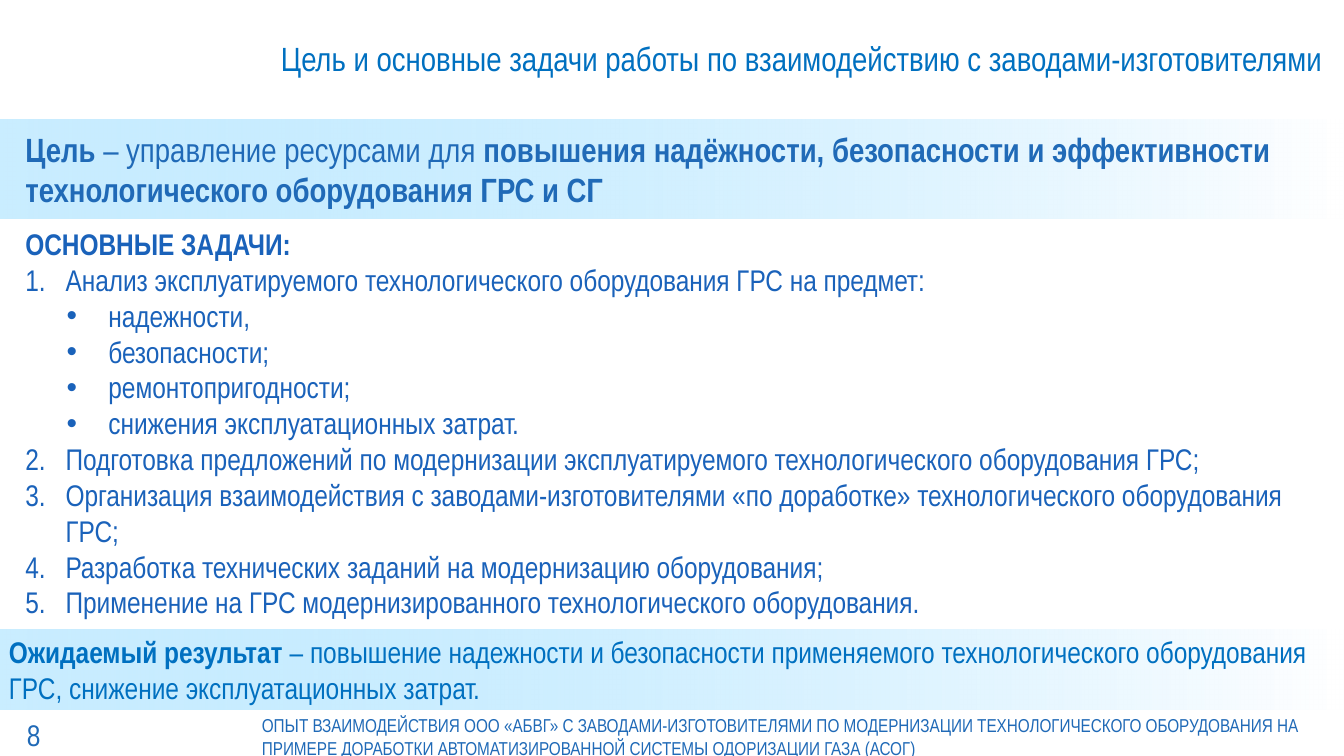
from dataclasses import dataclass

from lxml.etree import SubElement
from pptx import Presentation
from pptx.dml.color import RGBColor
from pptx.enum.shapes import MSO_SHAPE as Preset
from pptx.enum.text import MSO_ANCHOR as Anchor, MSO_AUTO_SIZE as AutoSize, PP_ALIGN as Align
from pptx.oxml.ns import qn
from pptx.util import Cm, Pt

FONT = "Arial Narrow"
STEEL = RGBColor(0x20, 0x6A, 0xB7)
BLUE = RGBColor(0x00, 0x70, 0xC0)
COBALT = RGBColor(0x1A, 0x62, 0xBA)
SKY = RGBColor(0x66, 0xCC, 0xFF)
WHITE = RGBColor(0xFF, 0xFF, 0xFF)
BAND_STOPS = ((SKY, 35), (WHITE, 82))  # colour, opacity in percent

PAGE_WIDTH, PAGE_HEIGHT = 25.4, 14.29
NO_INSETS = (0, 0, 0, 0)
USUAL_INSETS = (0.25, 0.13, 0.25, 0.13)


@dataclass(frozen=True)
class Span:
    text: str
    bold: bool = False


@dataclass(frozen=True)
class Line:
    """A paragraph; number or bullet gives its list mark, lengths are in cm."""
    spans: tuple[Span, ...]
    margin: float = 0
    indent: float = 0
    number: int = 0
    bullet: str = ""


@dataclass(frozen=True)
class Block:
    """A text block; at is left, top, width and height in cm."""
    at: tuple[float, float, float, float]
    lines: tuple[Line, ...]
    size: int
    color: RGBColor
    insets: tuple[float, float, float, float] = NO_INSETS
    anchor: Anchor = Anchor.MIDDLE
    band: bool = False


def plain(text: str) -> tuple[Line, ...]:
    return (Line((Span(text),)),)


def task(number: int, text: str) -> Line:
    return Line((Span(text),), 0.99, -0.76, number=number)


def criterion(text: str) -> Line:
    return Line((Span(text),), 1.8, -0.79, bullet="•")


TASKS = (
    Line((Span("ОСНОВНЫЕ ЗАДАЧИ:", True),), 0.05, 0.18),
    task(1, "Анализ эксплуатируемого технологического оборудования ГРС на предмет:"),
    criterion("надежности,"),
    criterion("безопасности;"),
    criterion("ремонтопригодности;"),
    criterion("снижения эксплуатационных затрат."),
    task(2, "Подготовка предложений по модернизации эксплуатируемого технологического "
            "оборудования ГРС;"),
    task(3, "Организация взаимодействия с заводами-изготовителями «по доработке» "
            "технологического оборудования ГРС;"),
    task(4, "Разработка технических заданий на модернизацию оборудования;"),
    task(5, "Применение на ГРС модернизированного технологического оборудования."),
)
GOAL = Line((
    Span("Цель ", True),
    Span("– управление ресурсами для "),
    Span("повышения надёжности, безопасности и эффективности "
         "технологического оборудования ГРС и СГ", True),
), 0.48)
RESULT = Line((
    Span("Ожидаемый результат ", True),
    Span("– повышение надежности и безопасности применяемого технологического "
         "оборудования ГРС, снижение эксплуатационных затрат."),
), 0.2)
TITLE = "Цель и основные задачи работы по взаимодействию с заводами-изготовителями"
FOOTER = ("ОПЫТ ВЗАИМОДЕЙСТВИЯ ООО «АБВГ» С ЗАВОДАМИ-ИЗГОТОВИТЕЛЯМИ ПО МОДЕРНИЗАЦИИ "
          "ТЕХНОЛОГИЧЕСКОГО ОБОРУДОВАНИЯ НА ПРИМЕРЕ ДОРАБОТКИ АВТОМАТИЗИРОВАННОЙ "
          "СИСТЕМЫ ОДОРИЗАЦИИ ГАЗА (АСОГ)")

BLOCKS = (
    Block((0, 2.26, PAGE_WIDTH, 1.88), (GOAL,), 18, STEEL, band=True),
    Block((5.31, 0, 20.09, 2.18), plain(TITLE), 18, BLUE),
    Block((-0.03, 11.91, 25.43, 1.5), (RESULT,), 16, BLUE, band=True),
    Block((0, 4.14, PAGE_WIDTH, 7.77), TASKS, 16, COBALT, USUAL_INSETS, Anchor.TOP),
    Block((4.7, 13.54, 20.7, 0.76), plain(FOOTER), 10, STEEL, USUAL_INSETS),
    Block((0, 13.49, 5.31, 0.79), plain("8"), 16, STEEL, (0.51, 0, 0, 0)),
)


def set_format(target, values: dict) -> None:
    for name, value in values.items():
        setattr(target, name, value)


def paint_band(shape) -> None:
    """Fill with a translucent gradient from left to right, without outline."""
    shape.shadow.inherit = False
    shape.line.fill.background()
    shape.fill.gradient()
    shape.fill.gradient_angle = 0
    for stop, (color, _) in zip(shape.fill.gradient_stops, BAND_STOPS):
        stop.color.rgb = color
    colors = shape.element.spPr.iter(qn("a:srgbClr"))
    for element, (_, opacity) in zip(colors, BAND_STOPS):
        SubElement(element, qn("a:alpha"), val=str(opacity * 1000))


def write_line(para, line: Line, block: Block) -> None:
    para.alignment = Align.LEFT
    properties = para._p.get_or_add_pPr()
    properties.set("marL", str(Cm(line.margin)))
    properties.set("indent", str(Cm(line.indent)))
    if line.number:
        SubElement(properties, qn("a:buFont"), typeface="+mj-lt")
        SubElement(properties, qn("a:buAutoNum"), type="arabicPeriod",
                   startAt=str(line.number))
    elif line.bullet:
        SubElement(properties, qn("a:buFont"), typeface="Arial")
        SubElement(properties, qn("a:buChar"), char=line.bullet)
    for span in line.spans:
        run = para.add_run()
        run.text = span.text
        set_format(run.font, {"name": FONT, "size": Pt(block.size), "bold": span.bold})
        run.font.color.rgb = block.color


def draw_block(page, block: Block) -> None:
    place = [Cm(length) for length in block.at]
    if block.band:
        box = page.shapes.add_shape(Preset.RECTANGLE, *place)
        paint_band(box)
    else:
        box = page.shapes.add_textbox(*place)
    frame = box.text_frame
    left, top, right, bottom = (Cm(length) for length in block.insets)
    set_format(frame, {
        "word_wrap": True, "auto_size": AutoSize.NONE, "vertical_anchor": block.anchor,
        "margin_left": left, "margin_top": top,
        "margin_right": right, "margin_bottom": bottom,
    })
    for index, line in enumerate(block.lines):
        para = frame.add_paragraph() if index else frame.paragraphs[0]
        write_line(para, line, block)


def main() -> None:
    deck = Presentation()
    set_format(deck, {"slide_width": Cm(PAGE_WIDTH), "slide_height": Cm(PAGE_HEIGHT)})
    page = deck.slides.add_slide(deck.slide_layouts[6])
    for block in BLOCKS:
        draw_block(page, block)
    deck.save("out.pptx")


if __name__ == "__main__":
    main()
